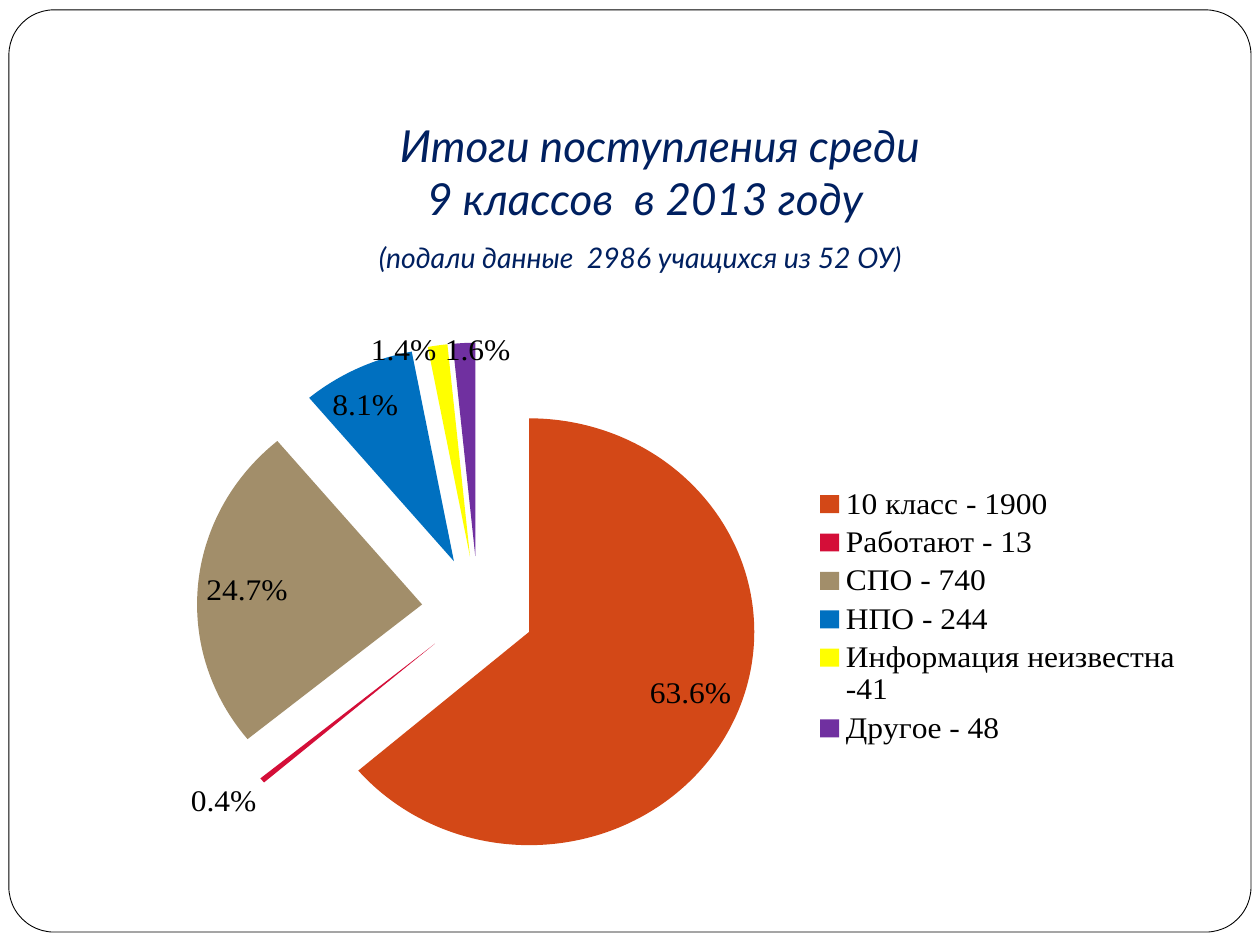
import pptx
import pptx.chart.data
import pptx.dml.color
import pptx.enum.chart
import pptx.enum.shapes
import pptx.enum.text
import pptx.oxml
import pptx.util
from pptx.util import Cm

RGBColor = pptx.dml.color.RGBColor
WHITE = RGBColor(0xFF, 0xFF, 0xFF)
BLACK = RGBColor(0, 0, 0)
NAVY = RGBColor(0x00, 0x20, 0x60)

# Text, size in points, left indent, space before in points
TITLE_LINES = [
    ("Итоги поступления среди", 25.2, Cm(1), 0),
    ("9 классов  в 2013 году", 25.2, Cm(0.4), 0),
    ("(подали данные  2986 учащихся из 52 ОУ)", 16.2, Cm(0.2), 9),
]
# Category, share, colour
DESTINATIONS = [
    ("10 класс - 1900", 0.636, RGBColor(0xD3, 0x48, 0x17)),
    ("Работают - 13", 0.004, RGBColor(0xD4, 0x0E, 0x38)),
    ("СПО - 740", 0.247, RGBColor(0xA2, 0x8E, 0x6A)),
    ("НПО - 244", 0.081, RGBColor(0x00, 0x70, 0xC0)),
    ("Информация неизвестна -41", 0.014, RGBColor(0xFF, 0xFF, 0x00)),
    ("Другое - 48", 0.016, RGBColor(0x70, 0x30, 0xA0)),
]
PLOT_AREA = {"x": 0.01, "y": 0.015, "w": 0.7, "h": 0.946}
EXPLOSION = 25


def add_frame(page):
    frame = page.shapes.add_shape(
        pptx.enum.shapes.MSO_SHAPE.ROUNDED_RECTANGLE,
        Cm(0.18), Cm(0.2), Cm(25.04), Cm(18.59))
    frame.adjustments[0] = 0.049
    frame.shadow.inherit = False
    frame.fill.solid()
    frame.fill.fore_color.rgb = WHITE
    frame.line.color.rgb = BLACK
    frame.line.width = pptx.util.Pt(0.5)


def add_title(page):
    box = page.shapes.add_textbox(Cm(1.3), Cm(3.33), Cm(23.01), Cm(3.2))
    frame = box.text_frame
    frame.word_wrap = True
    frame.vertical_anchor = pptx.enum.text.MSO_ANCHOR.BOTTOM
    frame.margin_bottom = Cm(1)
    frame.text = "\n".join(line[0] for line in TITLE_LINES)
    for para, (_, size, indent, before) in zip(frame.paragraphs, TITLE_LINES):
        para.alignment = pptx.enum.text.PP_ALIGN.CENTER
        para.space_before = pptx.util.Pt(before)
        para._p.get_or_add_pPr().set("marL", str(indent))
        font = para.runs[0].font
        font.name = "Lato"
        font.size = pptx.util.Pt(size)
        font.italic = True
        font.color.rgb = NAVY


def place_plot(chart):
    """Fix the inner plot area as fractions of the chart."""
    namespace = pptx.oxml.ns.nsdecls("c")
    sides = "".join(f'<c:{side}Mode val="edge"/>' for side in "xy")
    sides += "".join(f'<c:{side} val="{part}"/>' for side, part in PLOT_AREA.items())
    layout = pptx.oxml.parse_xml(
        f'<c:layout {namespace}><c:manualLayout><c:layoutTarget val="inner"/>'
        f"{sides}</c:manualLayout></c:layout>")
    plot_area = chart._chartSpace.chart.plotArea
    for old in plot_area.findall(pptx.oxml.ns.qn("c:layout")):
        plot_area.remove(old)
    plot_area.insert(0, layout)


def explode(series):
    explosion = pptx.oxml.parse_xml(
        f'<c:explosion {pptx.oxml.ns.nsdecls("c")} val="{EXPLOSION}"/>')
    series._element.get_or_add_spPr().addnext(explosion)


def add_pie(page):
    data = pptx.chart.data.CategoryChartData(number_format="0.0%")
    data.categories = [name for name, _, _ in DESTINATIONS]
    data.add_series("Series 1", [share for _, share, _ in DESTINATIONS])
    chart = page.shapes.add_chart(
        pptx.enum.chart.XL_CHART_TYPE.PIE,
        Cm(1.5), Cm(6.12), Cm(22.61), Cm(11.99), data).chart
    chart.has_title = False
    chart.font.name = "Times New Roman"
    chart.font.size = pptx.util.Pt(18)
    chart.font.color.rgb = BLACK
    chart.has_legend = True
    chart.legend.position = pptx.enum.chart.XL_LEGEND_POSITION.RIGHT
    chart.legend.include_in_layout = False
    place_plot(chart)

    plot = chart.plots[0]
    plot.vary_by_categories = True
    series = plot.series[0]
    explode(series)
    for index, (_, _, colour) in enumerate(DESTINATIONS):
        fill = series.points[index].format.fill
        fill.solid()
        fill.fore_color.rgb = colour
    plot.has_data_labels = True
    labels = plot.data_labels
    labels.show_value = True
    labels.show_percentage = False
    labels.number_format = "0.0%"
    labels.number_format_is_linked = False
    labels.position = pptx.enum.chart.XL_LABEL_POSITION.BEST_FIT


def main():
    deck = pptx.Presentation()
    deck.slide_width, deck.slide_height = Cm(25.4), Cm(19.05)
    page = deck.slides.add_slide(deck.slide_layouts[6])
    add_frame(page)
    add_title(page)
    add_pie(page)
    deck.save("out.pptx")


if __name__ == "__main__":
    main()
